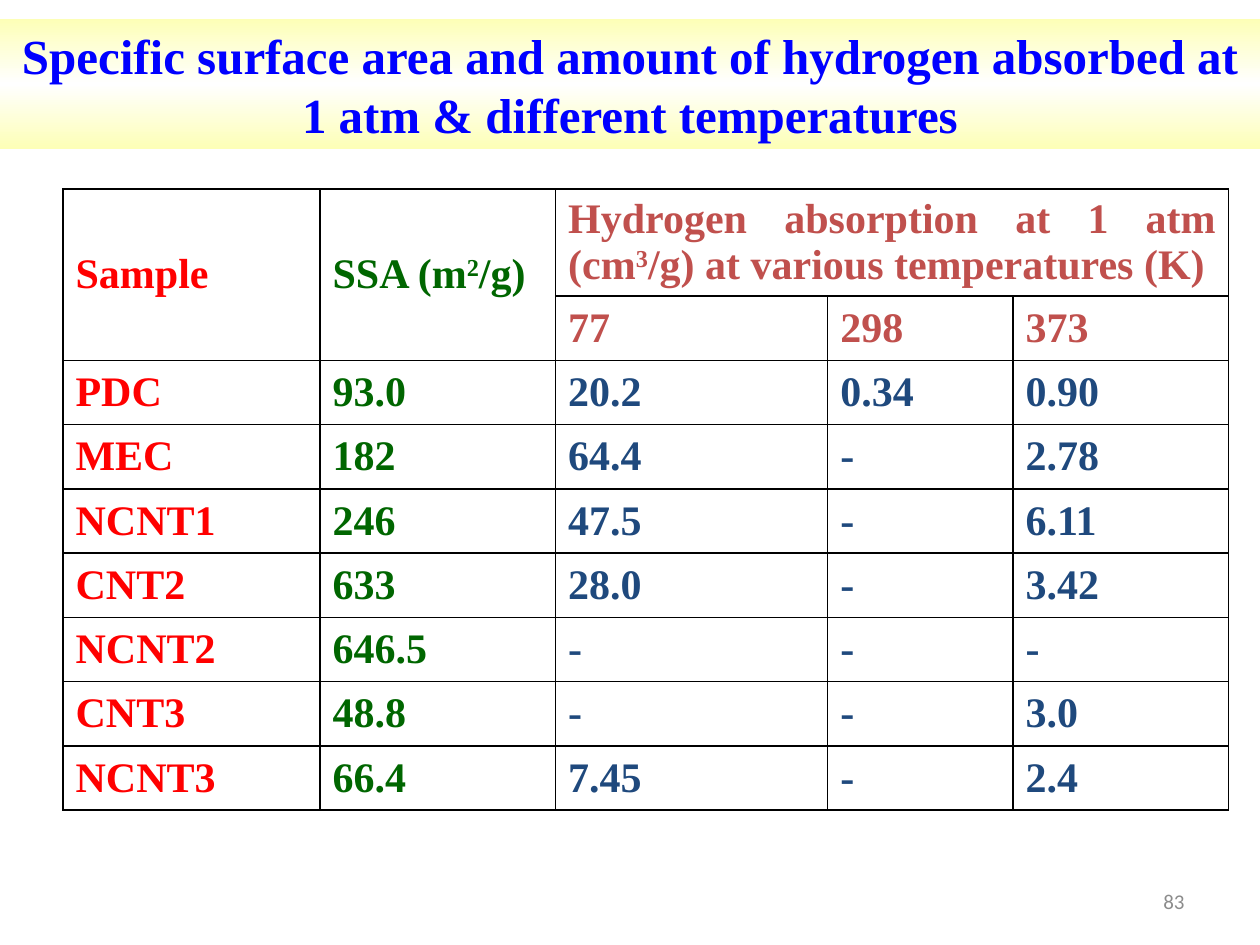
"""Build a slide tabulating surface area and hydrogen absorption of carbon samples."""
from copy import deepcopy

from lxml import etree
from pptx import Presentation
from pptx.dml.color import RGBColor
from pptx.enum.text import MSO_ANCHOR, MSO_AUTO_SIZE, PP_ALIGN
from pptx.oxml.ns import qn
from pptx.util import Inches, Pt

MIDDLE, TOP = MSO_ANCHOR.MIDDLE, MSO_ANCHOR.TOP
NO_FIT = MSO_AUTO_SIZE.NONE
CENTER, JUSTIFY, RIGHT = PP_ALIGN.CENTER, PP_ALIGN.JUSTIFY, PP_ALIGN.RIGHT

TITLE = "Specific surface area and amount of hydrogen absorbed at 1 atm & different temperatures"
PAGE_NUMBER = "83"
HEADER = [
    ["Sample", "SSA (m^2^/g)", "Hydrogen absorption at 1 atm (cm^3^/g) at various temperatures (K)"],
    ["", "", "77", "298", "373"],
]
SAMPLES = [
    ["PDC", "93.0", "20.2", "0.34", "0.90"],
    ["MEC", "182", "64.4", "-", "2.78"],
    ["NCNT1", "246", "47.5", "-", "6.11"],
    ["CNT2", "633", "28.0", "-", "3.42"],
    ["NCNT2", "646.5", "-", "-", "-"],
    ["CNT3", "48.8", "-", "-", "3.0"],
    ["NCNT3", "66.4", "7.45", "-", "2.4"],
]
MERGES = [((0, 0), (1, 0)), ((0, 1), (1, 1)), ((0, 2), (0, 4))]
COLUMN_WIDTHS = [2.04, 1.87, 2.16, 1.47, 1.71]
ROW_HEIGHTS = [0.85] + [0.51] * (len(HEADER) + len(SAMPLES) - 1)

THEME = {
    "title": {"name": "Times New Roman", "size": Pt(28), "bold": True, "color": "0000FF"},
    "cell": {"name": "Times New Roman", "size": Pt(24), "bold": True},
    "number": {"name": "Calibri", "size": Pt(12), "bold": False, "color": "8C8C8C"},
    "sample": "FF0000",
    "area": "006600",
    "heading": "C0504D",
    "value": "1F497D",
    "border": "000000",
    "band": [(0, "FDFFB7"), (0.5, "FFFFFF"), (1, "FDFFB7")],
}


def write(frame, text, style, align, anchor):
    """Write one paragraph, raising the parts between carets."""
    frame.word_wrap = True
    frame.vertical_anchor = anchor
    para = frame.paragraphs[0]
    para.alignment = align
    for index, part in enumerate(text.split("^")):
        span = para.add_run()
        span.text = part
        for key, value in style.items():
            if key == "color":
                span.font.color.rgb = RGBColor.from_string(value)
            else:
                setattr(span.font, key, value)
        if index % 2:
            span.font._element.set("baseline", "30000")


def place(shape, left, top, width, height):
    """Set the position and size of a shape in inches."""
    for key, value in zip(("left", "top", "width", "height"), (left, top, width, height)):
        setattr(shape, key, Inches(value))


def add_title(page):
    """Fill the title placeholder over a gradient band."""
    title = page.shapes.title
    place(title, 0, 0.15, 10, 1.03)
    title.fill.gradient()
    title.fill.gradient_angle = 90
    stop_list = title.fill._xPr.find(qn("a:gradFill")).find(qn("a:gsLst"))
    stop_list.append(deepcopy(stop_list[0]))
    for stop, (position, color) in zip(title.fill.gradient_stops, THEME["band"]):
        stop.position = position
        stop.color.rgb = RGBColor.from_string(color)
    write(title.text_frame, TITLE, THEME["title"], CENTER, TOP)
    title.text_frame.auto_size = NO_FIT


def add_borders(cell):
    """Draw a thin line on each side of a cell."""
    properties = cell._tc.get_or_add_tcPr()
    for index, side in enumerate(("lnL", "lnR", "lnT", "lnB")):
        line = etree.Element(qn(f"a:{side}"), w=str(Pt(1)))
        fill = etree.SubElement(line, qn("a:solidFill"))
        etree.SubElement(fill, qn("a:srgbClr"), val=THEME["border"])
        properties.insert(index, line)


def add_results(page):
    """Add the table with merged headings and coloured columns."""
    rows = HEADER + SAMPLES
    table = page.shapes.add_table(
        len(rows), len(COLUMN_WIDTHS), Inches(0.5), Inches(1.5),
        Inches(sum(COLUMN_WIDTHS)), Inches(sum(ROW_HEIGHTS)),
    ).table
    table.first_row = table.horz_banding = False
    for column, width in zip(table.columns, COLUMN_WIDTHS):
        column.width = Inches(width)
    for row, height in zip(table.rows, ROW_HEIGHTS):
        row.height = Inches(height)
    for first, last in MERGES:
        table.cell(*first).merge(table.cell(*last))
    for cell in table.iter_cells():
        cell.fill.background()
        add_borders(cell)
    for row_index, row in enumerate(rows):
        value_kind = "heading" if row_index < len(HEADER) else "value"
        kinds = ["sample", "area"] + [value_kind] * 3
        for column_index, (text, kind) in enumerate(zip(row, kinds)):
            if text:
                cell = table.cell(row_index, column_index)
                style = {**THEME["cell"], "color": THEME[kind]}
                write(cell.text_frame, text, style, JUSTIFY, MIDDLE)
                cell.vertical_anchor = MIDDLE


def main():
    """Assemble and save the deck."""
    deck = Presentation()
    deck.slide_width, deck.slide_height = Inches(10), Inches(7.5)
    page = deck.slides.add_slide(deck.slide_layouts[5])
    add_title(page)
    add_results(page)
    box = page.shapes.add_textbox(Inches(7.17), Inches(6.95), Inches(2.33), Inches(0.4))
    write(box.text_frame, PAGE_NUMBER, THEME["number"], RIGHT, MIDDLE)
    deck.save("out.pptx")


if __name__ == "__main__":
    main()
